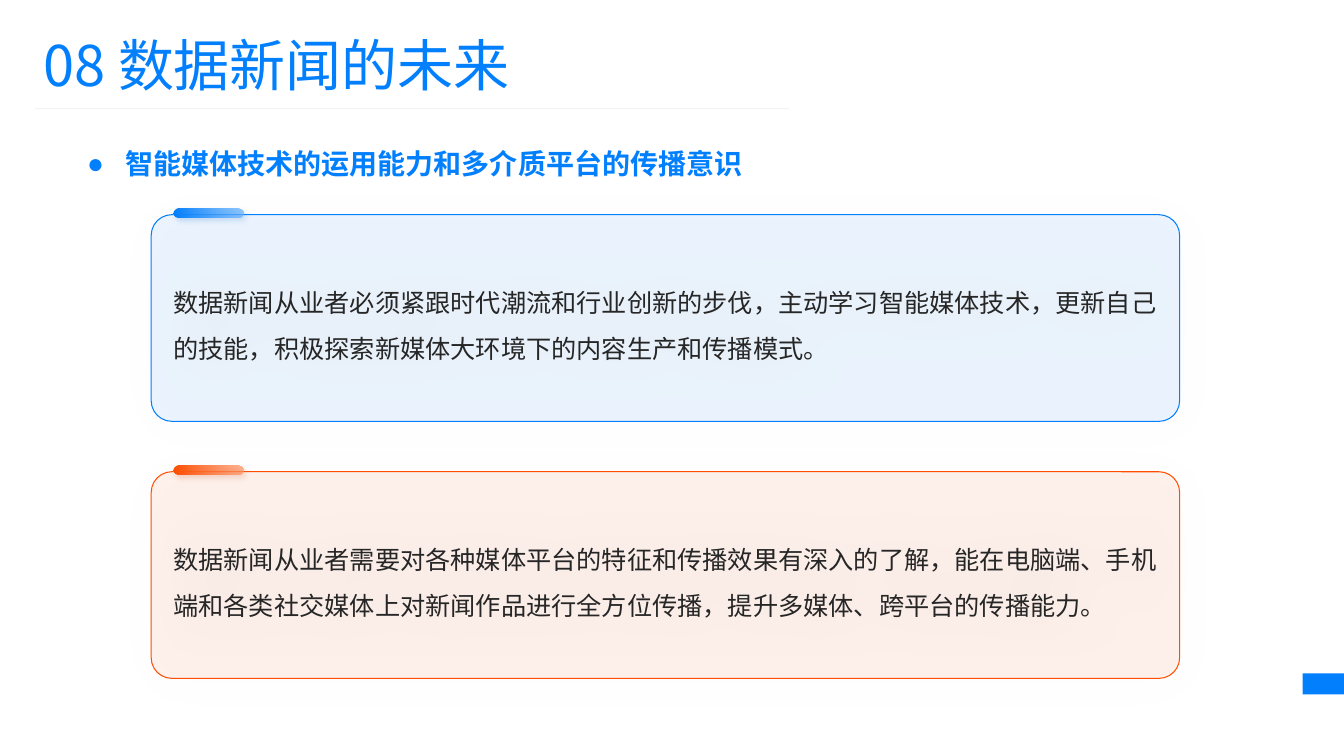
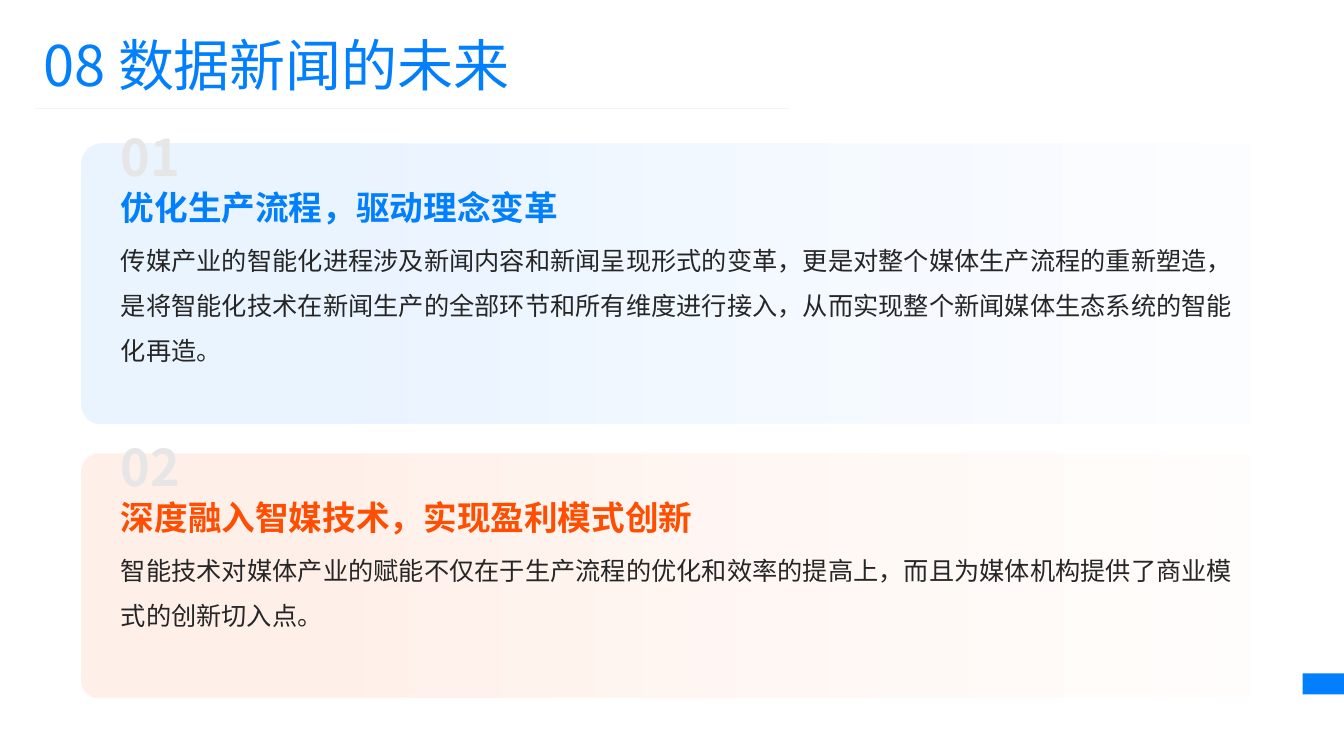
import pptx
import pptx.util
import pptx.dml.color
import pptx.enum.shapes
import pptx.enum.text
import pptx.oxml
import pptx.oxml.ns
import lxml.etree

Inches = pptx.util.Inches
Pt = pptx.util.Pt
Shape = pptx.enum.shapes.MSO_SHAPE
Align = pptx.enum.text.PP_ALIGN
Anchor = pptx.enum.text.MSO_ANCHOR
qn = pptx.oxml.ns.qn
FONT = "Noto Sans CJK SC"
BLUE, ORANGE, INK = "027FFD", "FF4E01", "262626"


def rgb(code):
    return pptx.dml.color.RGBColor.from_string(code)


def write(frame, text, size, color, bold=False, align=Align.LEFT,
          anchor=Anchor.MIDDLE, side=0, space=1.0):
    """Fill a text frame with one formatted paragraph and return it."""
    frame.text = text
    frame.word_wrap = True
    frame.auto_size = pptx.enum.text.MSO_AUTO_SIZE.NONE
    frame.vertical_anchor = anchor
    frame.margin_left = frame.margin_right = Inches(side)
    frame.margin_top = frame.margin_bottom = 0
    para = frame.paragraphs[0]
    para.alignment = align
    para.line_spacing = space
    para.space_before = Pt(0)
    for run in para.runs:
        font = run.font
        font.name, font.size, font.bold = FONT, Pt(size), bold
        font.color.rgb = rgb(color)
        east = lxml.etree.SubElement(font._element, qn("a:ea"))
        east.set("typeface", FONT)
    return para


prs = pptx.Presentation()
prs.slide_width, prs.slide_height = Inches(13.33), Inches(7.5)
skills = prs.slides.add_slide(prs.slide_layouts[1])
trends = prs.slides.add_slide(prs.slide_layouts[5])

# Parts that both slides share
for slide in (skills, trends):
    tab = slide.shapes.add_shape(
        Shape.RECTANGLE, Inches(12.92), Inches(6.68), Inches(0.42), Inches(0.21))
    tab.shadow.inherit = False
    tab.fill.solid()
    tab.fill.fore_color.rgb = rgb(BLUE)
    tab.line.fill.background()

    title = slide.shapes.title
    title.left, title.top = Inches(0.33), Inches(0.25)
    title.width, title.height = Inches(7.68), Inches(0.77)
    write(title.text_frame, "08 数据新闻的未来", 40, BLUE, side=0.1)

    rule = slide.shapes.add_connector(
        pptx.enum.shapes.MSO_CONNECTOR.STRAIGHT,
        Inches(0.35), Inches(1.08), Inches(7.83), Inches(1.08))
    rule.line.color.rgb = rgb("F2F2F2")
    rule.line.width = Pt(0.5)
    lxml.etree.SubElement(rule._element.spPr, qn("a:effectLst"))

# Slide 1: a bullet above two outlined cards
point = skills.placeholders[1]
point.left, point.top = Inches(0.46), Inches(1.35)
point.width, point.height = Inches(7.31), Inches(0.44)
para = write(point.text_frame, "智能媒体技术的运用能力和多介质平台的传播意识", 20, BLUE,
             bold=True, align=Align.CENTER, anchor=Anchor.BOTTOM)
props = para._p.get_or_add_pPr()
props.set("marL", str(Inches(0.38)))
props.set("indent", str(Inches(-0.38)))
lxml.etree.SubElement(props, qn("a:buFont")).set("typeface", "Arial")
lxml.etree.SubElement(props, qn("a:buChar")).set("char", "●")

fades = []   # shape, stops of (place, colour, opacity), angle
shades = []  # shape, colour, opacity, blur
cards = [
    (BLUE, "67B2FE", "015FBE",
     "数据新闻从业者必须紧跟时代潮流和行业创新的步伐，主动学习智能媒体技术，"
     "更新自己的技能，积极探索新媒体大环境下的内容生产和传播模式。"),
    (ORANGE, "FF9567", "C03A00",
     "数据新闻从业者需要对各种媒体平台的特征和传播效果有深入的了解，能在电脑端、"
     "手机端和各类社交媒体上对新闻作品进行全方位传播，提升多媒体、跨平台的传播能力。"),
]
for i, (main, pale, dark, text) in enumerate(cards):
    top = 2.13 + 2.55 * i
    card = skills.shapes.add_shape(
        Shape.ROUNDED_RECTANGLE, Inches(1.5), Inches(top), Inches(10.2), Inches(2.05))
    card.adjustments[0] = 0.1
    card.fill.solid()
    card.fill.fore_color.rgb = rgb(pale)
    tone = card._element.spPr.find(qn("a:solidFill"))[0]
    lxml.etree.SubElement(tone, qn("a:alpha")).set("val", "12000")
    card.line.color.rgb = rgb(main)
    card.line.width = Pt(0.75)
    write(card.text_frame, text, 18, INK, side=0.16, space=1.5)
    shades.append((card, "000000", 7, 35))

    pill = skills.shapes.add_shape(
        Shape.ROUNDED_RECTANGLE, Inches(1.72), Inches(top - 0.06),
        Inches(0.69), Inches(0.09))
    pill.adjustments[0] = 0.5
    fades.append((pill, [(0, main, 100), (1, pale, 71)], 0))
    shades.append((pill, dark, 20, 4))

# Slide 2: two numbered panels
panels = [
    (1.42, 2.78, BLUE, "01", "优化生产流程，驱动理念变革",
     "传媒产业的智能化进程涉及新闻内容和新闻呈现形式的变革，更是对整个媒体生产流程的重新塑造，"
     "是将智能化技术在新闻生产的全部环节和所有维度进行接入，从而实现整个新闻媒体生态系统的智能化再造。"),
    (4.5, 2.42, ORANGE, "02", "深度融入智媒技术，实现盈利模式创新",
     "智能技术对媒体产业的赋能不仅在于生产流程的优化和效率的提高上，"
     "而且为媒体机构提供了商业模式的创新切入点。"),
]
for top, height, main, number, head, text in panels:
    panel = trends.shapes.add_shape(
        Shape.ROUNDED_RECTANGLE, Inches(0.81), Inches(top), Inches(11.81), Inches(height))
    panel.adjustments[0] = 0.07
    panel.shadow.inherit = False
    fades.append((panel, [(0, main, 0), (0.8, main, 8)], 180))

    lines = [
        (-0.1, 0.46, number, 36, "E7E6E6", True, Align.LEFT, Anchor.MIDDLE, 1.0),
        (0.37, 0.46, head, 24, main, True, Align.LEFT, Anchor.BOTTOM, 1.0),
        (0.86, 1.37, text, 18, INK, False, Align.JUSTIFY, Anchor.TOP, 1.5),
    ]
    for drop, tall, words, size, color, bold, align, anchor, space in lines:
        box = trends.shapes.add_textbox(
            Inches(1.2), Inches(top + drop), Inches(11.03), Inches(tall))
        write(box.text_frame, words, size, color, bold, align, anchor, space=space)

# Gradients with transparency
for shape, stops, angle in fades:
    shape.line.fill.background()
    shape.fill.gradient()
    shape.fill.gradient_angle = angle
    for stop, (place, color, alpha) in zip(shape.fill.gradient_stops, stops):
        stop.position = place
        stop.color.rgb = rgb(color)
    for tone, (place, color, alpha) in zip(
            shape._element.spPr.xpath("./a:gradFill//a:srgbClr"), stops):
        lxml.etree.SubElement(tone, qn("a:alpha")).set("val", str(alpha * 1000))

# Soft shadows
for shape, color, alpha, blur in shades:
    shape.shadow.inherit = False
    effects = shape._element.spPr.find(qn("a:effectLst"))
    shade = lxml.etree.SubElement(effects, qn("a:outerShdw"))
    for key, value in (("blurRad", Pt(blur)), ("dist", Pt(3)), ("dir", 45 * 60000),
                       ("algn", "tl"), ("rotWithShape", 0)):
        shade.set(key, str(value))
    tone = lxml.etree.SubElement(shade, qn("a:srgbClr"))
    tone.set("val", color)
    lxml.etree.SubElement(tone, qn("a:alpha")).set("val", str(alpha * 1000))

prs.save("out.pptx")
